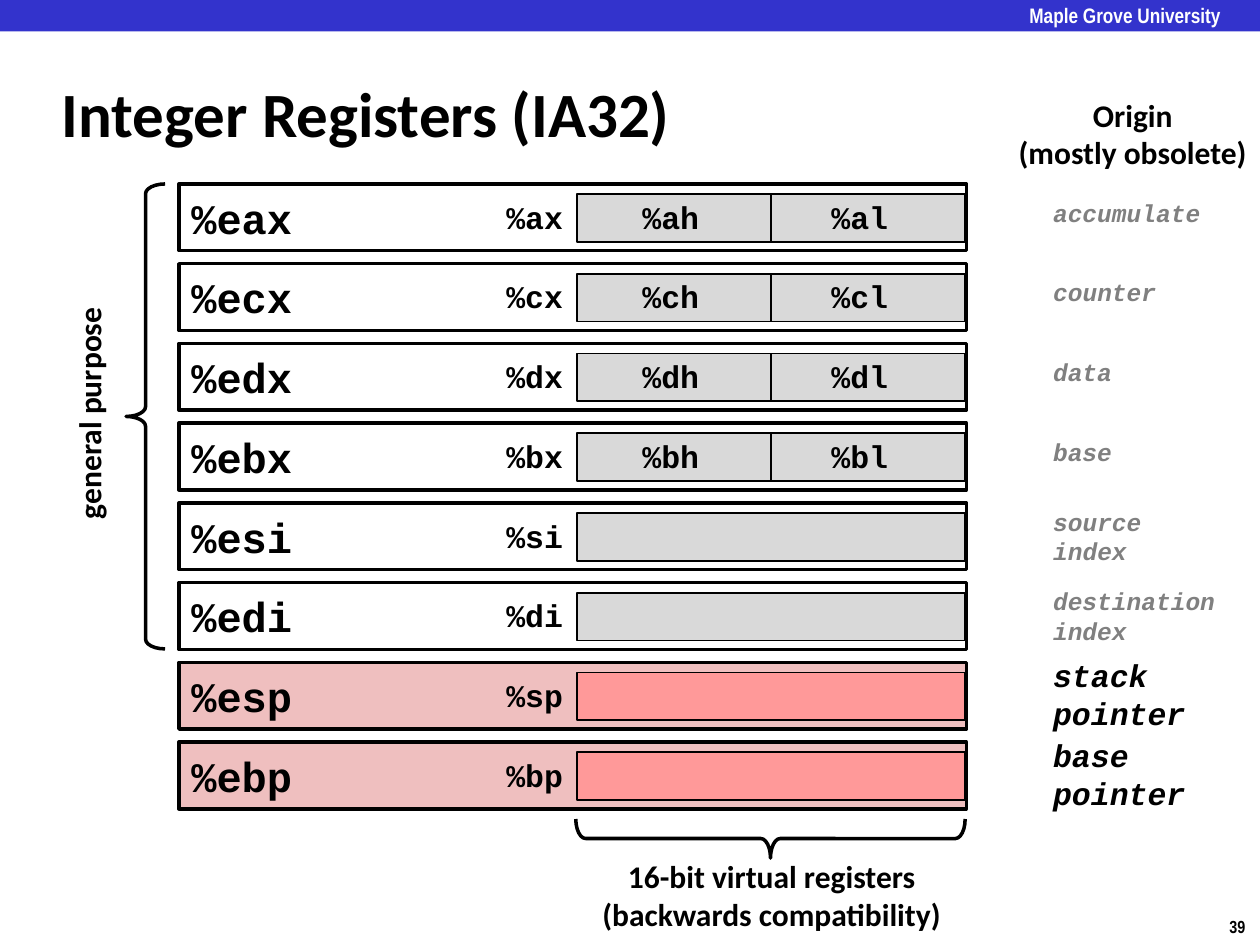
"""Build the slide on IA32 integer registers and their 16-bit parts."""
from lxml.etree import SubElement
from pptx import Presentation
from pptx.dml.color import RGBColor
from pptx.enum.shapes import MSO_CONNECTOR, MSO_SHAPE as SHAPE
from pptx.enum.text import MSO_ANCHOR as ANCHOR, MSO_AUTO_SIZE as FIT, PP_ALIGN as ALIGN
from pptx.oxml.ns import qn
from pptx.util import Inches, Pt

BLACK, WHITE, GREY, BLUE = "000000", "FFFFFF", "808080", "3333CC"
CODE, BODY, NARROW = "Courier New", "Calibri", "Arial Narrow"
color = RGBColor.from_string

prs = Presentation()
prs.slide_width, prs.slide_height = Inches(10), Inches(7.5)
slide = prs.slides.add_slide(prs.slide_layouts[5])
shapes = slide.shapes


def write(holder, lines, size, font, ink=BLACK, align=ALIGN.LEFT, italic=False,
          anchor=ANCHOR.TOP, wrap=False):
    frame = holder.text_frame
    frame.word_wrap = wrap
    frame.auto_size = FIT.NONE if wrap else FIT.SHAPE_TO_FIT_TEXT
    frame.vertical_anchor = anchor
    for number, line in enumerate(lines):
        paragraph = frame.add_paragraph() if number else frame.paragraphs[0]
        paragraph.alignment = align
        run = paragraph.add_run()
        run.text = line
        run.font.size, run.font.name = Pt(size), font
        run.font.bold, run.font.italic = True, italic
        run.font.color.rgb = color(ink)


def draw(kind, left, top, width, height, fill=None, weight=None):
    shape = shapes.add_shape(kind, Inches(left), Inches(top), Inches(width), Inches(height))
    shape.shadow.inherit = False
    if fill:
        shape.fill.solid()
        shape.fill.fore_color.rgb = color(fill)
    else:
        shape.fill.background()
    if weight:
        shape.line.color.rgb = color(BLACK)
        shape.line.width = Pt(weight)
    else:
        shape.line.fill.background()
    return shape


draw(SHAPE.RECTANGLE, 0, 0, 10, 0.25, BLUE)
school = shapes.add_textbox(Inches(8.17), Inches(0.02), Inches(1.67), Inches(0.19))
write(school, ["Maple Grove University"], 12, NARROW, WHITE, wrap=True)
inset = school.text_frame
inset.margin_left = inset.margin_right = inset.margin_top = inset.margin_bottom = 0
page_number = shapes.add_textbox(Inches(9.66), Inches(7.22), Inches(0.34), Inches(0.27))
write(page_number, ["39"], 10, NARROW)

title = shapes.title
title.left, title.top = Inches(0.39), Inches(0.48)
title.width, title.height = Inches(8.3), Inches(0.83)
write(title, ["Integer Registers (IA32)"], 36, BODY, anchor=ANCHOR.MIDDLE, wrap=True)

registers = [
    ("ax", ["accumulate"]),
    ("cx", ["counter"]),
    ("dx", ["data"]),
    ("bx", ["base"]),
    ("si", ["source", "index"]),
    ("di", ["destination", "index"]),
    ("sp", ["stack", "pointer"]),
    ("bp", ["base", "pointer"]),
]
first_top, last_top = 1.46, 5.89
pitch = (last_top - first_top) / (len(registers) - 1)
half_left, half_width = 4.58, 3.08
middle = half_left + half_width / 2

for row, (name, origin) in enumerate(registers):
    top = first_top + row * pitch
    is_pointer = "pointer" in origin
    has_bytes = name.endswith("x")
    full_fill, half_fill = ("EFBFBF", "FF9999") if is_pointer else (WHITE, "D9D9D9")

    full_register = draw(SHAPE.RECTANGLE, 1.42, top, 6.25, 0.53, full_fill, 2)
    write(full_register, [f"%e{name}"], 24, CODE, anchor=ANCHOR.MIDDLE, wrap=True)
    draw(SHAPE.RECTANGLE, half_left, top + 0.08, half_width, 0.38, half_fill, 1)

    labels = [(3.92, name)]
    if has_bytes:
        labels += [(5, name[0] + "h"), (6.5, name[0] + "l")]
        divider = shapes.add_connector(MSO_CONNECTOR.STRAIGHT, Inches(middle), Inches(top + 0.08),
                                       Inches(middle), Inches(top + 0.46))
        divider.line.color.rgb = color(BLACK)
        divider.line.width = Pt(1)
        SubElement(divider._element.spPr, qn("a:effectLst"))
    for left, label in labels:
        part = shapes.add_textbox(Inches(left), Inches(top + 0.06), Inches(0.65), Inches(0.4))
        write(part, [f"%{label}"], 18, CODE)

    size, ink = (18, BLACK) if is_pointer else (14, GREY)
    rise = 0.1 if is_pointer else 0.02 if len(origin) > 1 else -0.06
    width = 0.22 + max(map(len, origin)) * 0.6 * size / 72
    height = 0.1 + len(origin) * size * 1.2 / 72
    meaning = shapes.add_textbox(Inches(8.26), Inches(top - rise), Inches(width), Inches(height))
    write(meaning, origin, size, CODE, ink, italic=True)

braces = [(5.96, 5.11, 3.09, 90), (1, 1.46, 3.69, 180)]
for left, top, length, turn in braces:
    brace = draw(SHAPE.RIGHT_BRACE, left, top, 0.31, length, weight=2)
    brace.rotation = turn
    brace.adjustments[0], brace.adjustments[1] = 0.25, 0.5

captions = [
    (4.67, 6.75, 2.91, 0.71, 0, ["16-bit virtual registers", "(backwards compatibility)"]),
    (-0.24, 3.08, 1.89, 0.4, 270, ["general purpose"]),
    (7.98, 0.71, 2.02, 0.71, 0, ["Origin", "(mostly obsolete)"]),
]
for left, top, width, height, turn, lines in captions:
    caption = shapes.add_textbox(Inches(left), Inches(top), Inches(width), Inches(height))
    caption.rotation = turn
    write(caption, lines, 18, BODY, align=ALIGN.CENTER)

prs.save("out.pptx")
